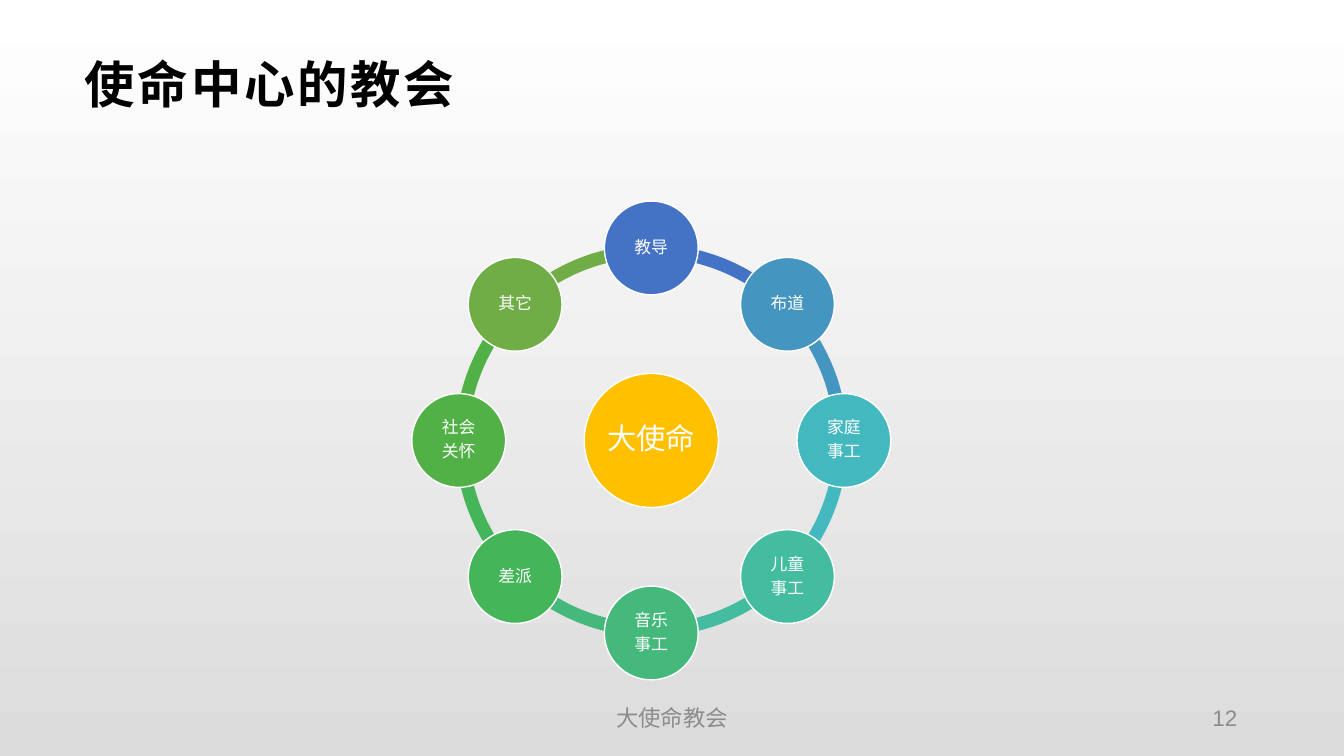
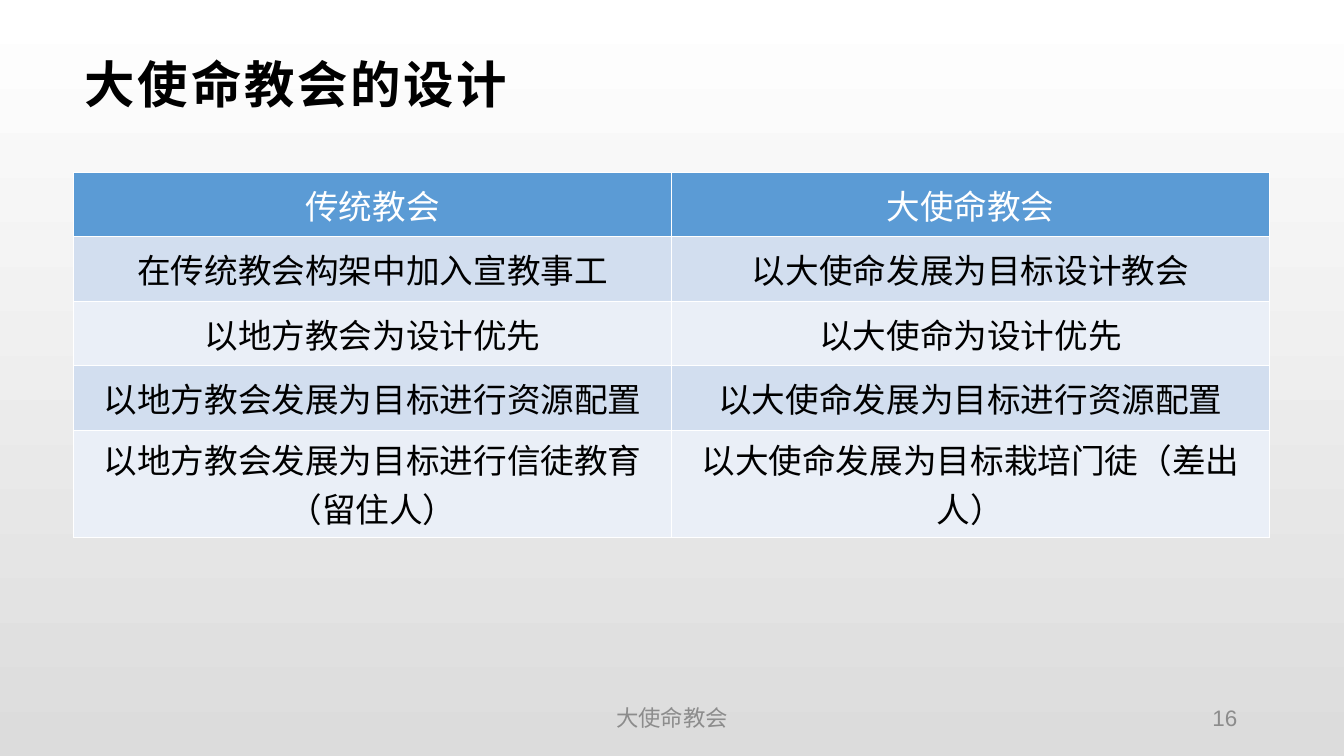
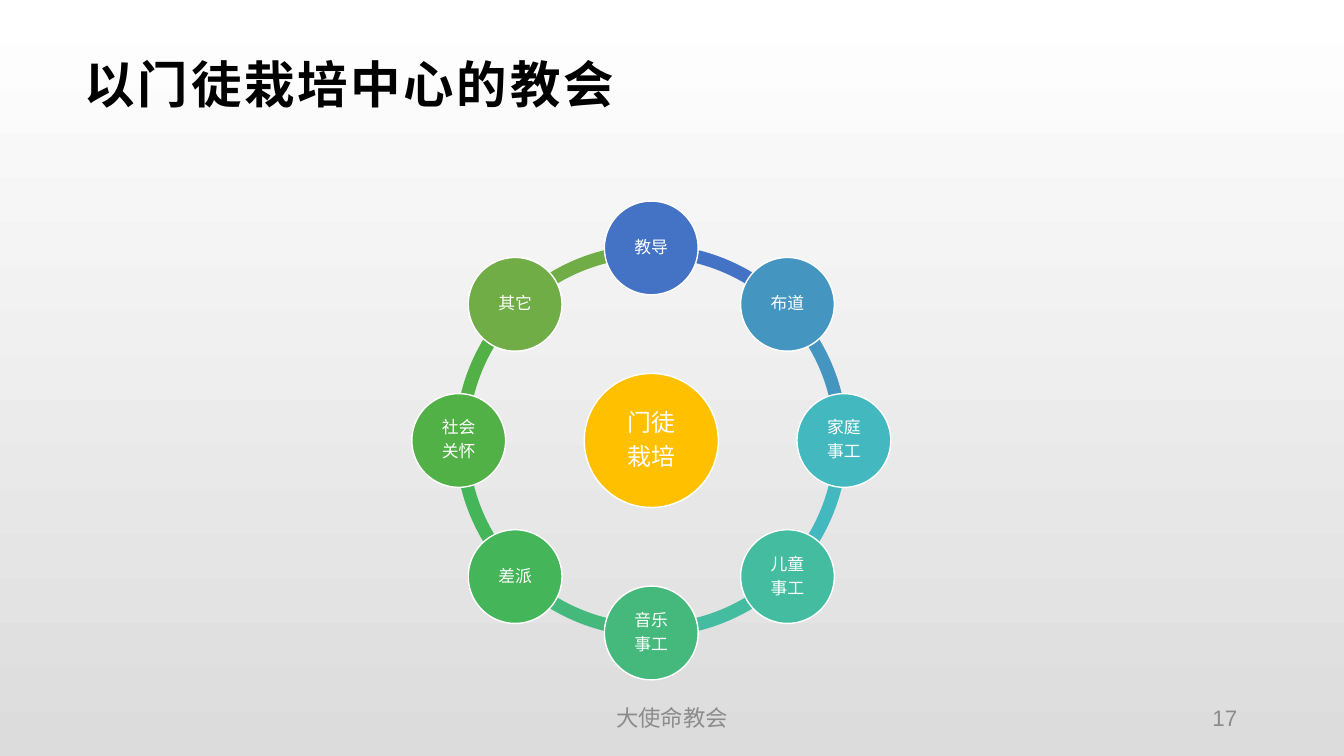
import math
from dataclasses import dataclass
from typing import NamedTuple

from lxml import etree
from pptx import Presentation
from pptx import util as u
from pptx.dml.color import RGBColor
from pptx.enum import lang, shapes, text
from pptx.oxml import ns
from pptx.slide import Slide
from pptx.text.text import TextFrame


@dataclass(frozen=True)
class Theme:
    white: str = "FFFFFF"
    black: str = "000000"
    backdrop_end: str = "DCDCDC"
    footer: str = "8C8C8C"
    hub: str = "FFC000"
    header: str = "5B9BD5"
    bands: tuple[str, str] = ("D2DEEF", "EAEFF7")
    title_font: str = "Calibri"
    body_font: str = "Arial"
    title_size: int = 36
    table_size: int = 24
    footer_size: int = 16
    ministry_size: int = 12


class Box(NamedTuple):
    left: float
    top: float
    width: float
    height: float

    def emu(self) -> tuple[int, ...]:
        return tuple(u.Inches(length) for length in self)


class Style(NamedTuple):
    size: int
    color: str
    align: text.PP_ALIGN = text.PP_ALIGN.CENTER
    font: str = "Arial"
    bold: bool = False
    spacing: int = 0


class Ministry(NamedTuple):
    label: str
    color: str


class Wheel(NamedTuple):
    title: str
    number: int
    hub: str
    hub_size: int


class Comparison(NamedTuple):
    title: str
    number: int
    rows: tuple[tuple[str, str], ...]


THEME = Theme()
TITLE = Style(THEME.title_size, THEME.black, text.PP_ALIGN.LEFT, THEME.title_font, True, 2)
FOOTER = Style(THEME.footer_size, THEME.footer, font=THEME.body_font)
NUMBER = FOOTER._replace(align=text.PP_ALIGN.RIGHT)

ROW_HEIGHTS = (0.64, 0.64, 0.64, 0.64, 1.06)
TITLE_BOX = Box(0.73, 0.47, 11.87, 0.71)
FOOTER_BOX = Box(4.5, 6.94, 4.33, 0.35)
NUMBER_BOX = Box(9.42, 6.94, 2.95, 0.35)
TABLE_BOX = Box(0.73, 1.71, 11.86, sum(ROW_HEIGHTS))
TITLE_INSETS = (0.11, 0.04, 0.08, 0.04)
FOOTER_INSETS = (0.1, 0.05, 0.1, 0.05)
CIRCLE_INSETS = (0.02, 0.02, 0.02, 0.02)

CENTER_X, CENTER_Y = 6.46, 4.37
ORBIT = 1.91
RING_DIAMETER = 3.89
RING_THICKNESS = 0.13
HUB_DIAMETER = 1.33
MINISTRY_DIAMETER = 0.93
ADJUSTMENT_PER_DEGREE = 0.6

MINISTRIES = (
    Ministry("教导", "4472C4"),
    Ministry("布道", "4496C1"),
    Ministry("家庭\n事工", "43B8BF"),
    Ministry("儿童\n事工", "43BCA0"),
    Ministry("音乐\n事工", "44B97B"),
    Ministry("差派", "45B559"),
    Ministry("社会\n关怀", "52B146"),
    Ministry("其它", "70AD47"),
)

CHURCH = "大使命教会"
SLIDES = (
    Wheel("使命中心的教会", 12, "大使命", 21),
    Comparison("大使命教会的设计", 16, (
        ("传统教会", CHURCH),
        ("在传统教会构架中加入宣教事工", "以大使命发展为目标设计教会"),
        ("以地方教会为设计优先", "以大使命为设计优先"),
        ("以地方教会发展为目标进行资源配置", "以大使命发展为目标进行资源配置"),
        ("以地方教会发展为目标进行信徒教育（留住人）", "以大使命发展为目标栽培门徒（差出人）"),
    )),
    Wheel("以门徒栽培中心的教会", 17, "门徒\n栽培", 17),
)


def rgb(color: str) -> RGBColor:
    return RGBColor.from_string(color)


def write(frame: TextFrame, words: str, style: Style) -> None:
    frame.text = words
    for paragraph in frame.paragraphs:
        paragraph.alignment = style.align
        for run in paragraph.runs:
            run.font.size = u.Pt(style.size)
            run.font.name = style.font
            run.font.bold = style.bold
            run.font.color.rgb = rgb(style.color)
            run.font.language_id = lang.MSO_LANGUAGE_ID.SIMPLIFIED_CHINESE
            if style.spacing:
                run._r.get_or_add_rPr().set("spc", str(style.spacing * 100))


def set_frame(frame: TextFrame, insets: tuple[float, ...]) -> None:
    frame.word_wrap = True
    frame.vertical_anchor = text.MSO_ANCHOR.MIDDLE
    (frame.margin_left, frame.margin_top,
     frame.margin_right, frame.margin_bottom) = map(u.Inches, insets)


def add_text(slide: Slide, box: Box, words: str, style: Style, insets: tuple[float, ...]) -> None:
    frame = slide.shapes.add_textbox(*box.emu()).text_frame
    set_frame(frame, insets)
    write(frame, words, style)


def square_around(x: float, y: float, diameter: float) -> Box:
    return Box(x - diameter / 2, y - diameter / 2, diameter, diameter)


def add_circle(slide: Slide, box: Box, color: str, label: str, size: int) -> None:
    circle = slide.shapes.add_shape(shapes.MSO_SHAPE.OVAL, *box.emu())
    circle.shadow.inherit = False
    circle.fill.solid()
    circle.fill.fore_color.rgb = rgb(color)
    circle.line.color.rgb = rgb(THEME.white)
    circle.line.width = u.Pt(1)
    set_frame(circle.text_frame, CIRCLE_INSETS)
    write(circle.text_frame, label, Style(size, THEME.white, font=THEME.body_font))
    for paragraph in circle.text_frame.paragraphs:
        paragraph.line_spacing = 0.9
        paragraph.space_after = u.Pt(0)
        after = paragraph._p.pPr.find(ns.qn("a:spcAft"))
        after.remove(after[0])
        etree.SubElement(after, ns.qn("a:spcPct")).set("val", "35000")


def add_arc(slide: Slide, start: float, end: float, color: str) -> None:
    box = square_around(CENTER_X, CENTER_Y, RING_DIAMETER)
    arc = slide.shapes.add_shape(shapes.MSO_SHAPE.BLOCK_ARC, *box.emu())
    arc.adjustments[0] = start % 360 * ADJUSTMENT_PER_DEGREE
    arc.adjustments[1] = end % 360 * ADJUSTMENT_PER_DEGREE
    arc.adjustments[2] = RING_THICKNESS / RING_DIAMETER
    arc.shadow.inherit = False
    arc.fill.solid()
    arc.fill.fore_color.rgb = rgb(color)
    arc.line.fill.background()


def draw_wheel(slide: Slide, wheel: Wheel) -> None:
    step = 360 / len(MINISTRIES)
    angles = [270 + step * index for index in range(len(MINISTRIES))]
    for angle, ministry in zip(angles, MINISTRIES):
        add_arc(slide, angle, angle + step, ministry.color)
    add_circle(slide, square_around(CENTER_X, CENTER_Y, HUB_DIAMETER),
               THEME.hub, wheel.hub, wheel.hub_size)
    for angle, ministry in zip(angles, MINISTRIES):
        x = CENTER_X + ORBIT * math.cos(math.radians(angle))
        y = CENTER_Y + ORBIT * math.sin(math.radians(angle))
        add_circle(slide, square_around(x, y, MINISTRY_DIAMETER),
                   ministry.color, ministry.label, THEME.ministry_size)


def add_borders(cell) -> None:
    properties = cell._tc.get_or_add_tcPr()
    for position, side in enumerate(("a:lnL", "a:lnR", "a:lnT", "a:lnB")):
        border = etree.Element(ns.qn(side), w=str(u.Pt(1)))
        fill = etree.SubElement(border, ns.qn("a:solidFill"))
        etree.SubElement(fill, ns.qn("a:srgbClr"), val=THEME.white)
        properties.insert(position, border)


def draw_comparison(slide: Slide, comparison: Comparison) -> None:
    rows = comparison.rows
    table = slide.shapes.add_table(len(rows), len(rows[0]), *TABLE_BOX.emu()).table
    table.first_row = False
    table.horz_banding = False
    for row_index, (row, height) in enumerate(zip(rows, ROW_HEIGHTS)):
        is_header = row_index == 0
        table.rows[row_index].height = u.Inches(height)
        fill = THEME.header if is_header else THEME.bands[(row_index - 1) % 2]
        color = THEME.white if is_header else THEME.black
        for column_index, words in enumerate(row):
            cell = table.cell(row_index, column_index)
            cell.fill.solid()
            cell.fill.fore_color.rgb = rgb(fill)
            cell.vertical_anchor = text.MSO_ANCHOR.MIDDLE
            cell.margin_top = cell.margin_bottom = u.Inches(0.04)
            add_borders(cell)
            write(cell.text_frame, words, Style(THEME.table_size, color, font=THEME.body_font))


def set_backdrop(deck) -> None:
    fill = deck.slide_master.background.fill
    fill.gradient()
    fill.gradient_angle = 270
    for stop, color in zip(fill.gradient_stops, (THEME.white, THEME.backdrop_end)):
        stop.color.rgb = rgb(color)


def main() -> None:
    deck = Presentation()
    deck.slide_width = u.Inches(13.33)
    deck.slide_height = u.Inches(7.5)
    set_backdrop(deck)
    for content in SLIDES:
        slide = deck.slides.add_slide(deck.slide_layouts[6])
        add_text(slide, TITLE_BOX, content.title, TITLE, TITLE_INSETS)
        if isinstance(content, Wheel):
            draw_wheel(slide, content)
        else:
            draw_comparison(slide, content)
        add_text(slide, FOOTER_BOX, CHURCH, FOOTER, FOOTER_INSETS)
        add_text(slide, NUMBER_BOX, str(content.number), NUMBER, FOOTER_INSETS)
    deck.save("out.pptx")


if __name__ == "__main__":
    main()
